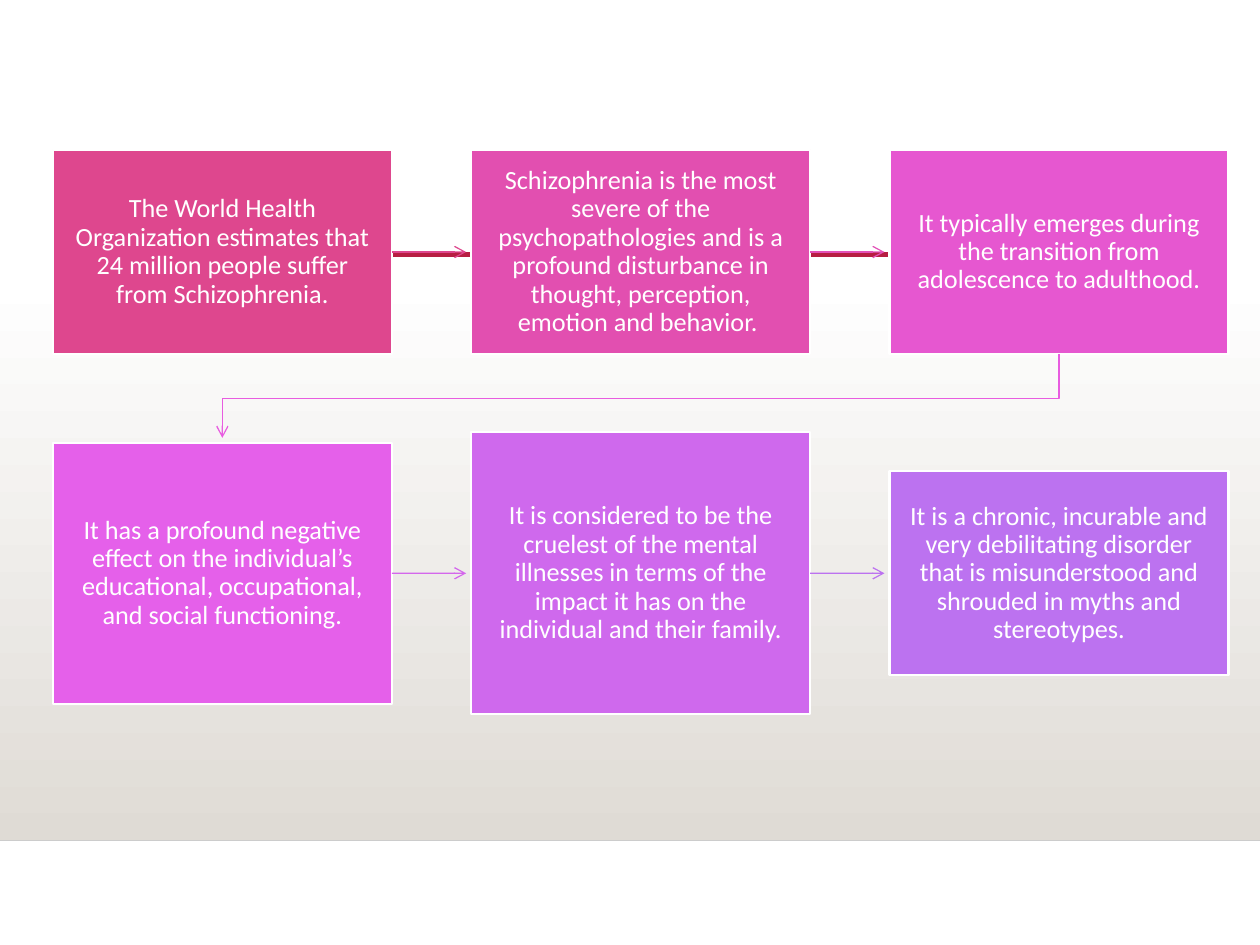
from dataclasses import dataclass

from lxml.etree import SubElement
from pptx import Presentation
from pptx.dml.color import RGBColor
from pptx.enum.shapes import MSO_CONNECTOR, MSO_SHAPE
from pptx.enum.text import MSO_ANCHOR, PP_ALIGN
from pptx.oxml.ns import qn
from pptx.util import Inches, Pt

COLORS = {
    "white": "FFFFFF",
    "sand": "DFDBD5",
    "floor": "CCCCCC",
    "red": "B71E42",
    "prevalence": "DE478E",
    "severity": "E24FB0",
    "onset": "E657D0",
    "functioning": "E560EA",
    "impact": "CF69ED",
    "outlook": "BC72F0",
    "to_severity": "DE478E",
    "to_onset": "E351B8",
    "to_functioning": "E85CE0",
    "to_impact": "D467EC",
    "to_outlook": "BC72F0",
}
SLIDE_WIDTH, SLIDE_HEIGHT = 10, 7.5
GRID_LEFT, COLUMN_PITCH, BOX_WIDTH = 0.42, 3.32, 2.69
ROW_CENTERS = (2.0, 4.55)
ARROW_GAP = 0.04
HORIZON, FLOOR = 2.2, 6.67


@dataclass(frozen=True)
class Step:
    key: str
    column: int
    row: int
    height: float
    text: str

    @property
    def left(self) -> float:
        return GRID_LEFT + self.column * COLUMN_PITCH

    @property
    def center(self) -> float:
        return self.left + BOX_WIDTH / 2

    @property
    def middle(self) -> float:
        return ROW_CENTERS[self.row]

    @property
    def top(self) -> float:
        return self.middle - self.height / 2


STEPS = (
    Step("prevalence", 0, 0, 1.62,
         "The World Health Organization estimates that 24 million people "
         "suffer from Schizophrenia."),
    Step("severity", 1, 0, 1.62,
         "Schizophrenia is the most severe of the psychopathologies and is a "
         "profound disturbance in thought, perception, emotion and behavior. "),
    Step("onset", 2, 0, 1.62,
         "It typically emerges during the transition from adolescence to adulthood."),
    Step("functioning", 0, 1, 2.07,
         "It has a profound negative effect on the individual’s educational, "
         "occupational, and social functioning."),
    Step("impact", 1, 1, 2.24,
         "It is considered to be the cruelest of the mental illnesses in terms "
         "of the impact it has on the individual and their family."),
    Step("outlook", 2, 1, 1.62,
         "It is a chronic, incurable and very debilitating disorder that is "
         "misunderstood and shrouded in myths and stereotypes."),
)


def color(name: str) -> RGBColor:
    return RGBColor.from_string(COLORS[name])


def write(frame, text: str, *, size: float, ink: str, font: str = "Calibri",
          align=PP_ALIGN.CENTER, spacing: float = 0.9) -> None:
    paragraph = frame.paragraphs[0]
    paragraph.text = text
    paragraph.alignment = align
    paragraph.line_spacing = spacing
    paragraph.font.name = font
    paragraph.font.size = Pt(size)
    paragraph.font.color.rgb = color(ink)


def style_line(shape, ink: str, width: float, arrow: bool = False) -> None:
    shape.line.color.rgb = color(ink)
    shape.line.width = Pt(width)
    if arrow:
        outline = shape._element.spPr.find(qn("a:ln"))
        SubElement(outline, qn("a:tailEnd"), type="arrow")


def draw_line(slide, start: tuple, end: tuple, ink: str, width: float,
              arrow: bool = False):
    connector = slide.shapes.add_connector(
        MSO_CONNECTOR.STRAIGHT, *(Inches(value) for value in (*start, *end)))
    style_line(connector, ink, width, arrow)
    SubElement(connector._element.spPr, qn("a:effectLst"))
    return connector


def draw_backdrop(slide) -> None:
    glow = slide.shapes.add_shape(
        MSO_SHAPE.RECTANGLE, 0, Inches(HORIZON),
        Inches(SLIDE_WIDTH), Inches(FLOOR - HORIZON))
    glow.shadow.inherit = False
    glow.line.fill.background()
    glow.fill.gradient()
    glow.fill.gradient_angle = 270
    for stop, name in zip(glow.fill.gradient_stops, ("white", "sand")):
        stop.color.rgb = color(name)
    draw_line(slide, (0, FLOOR), (SLIDE_WIDTH, FLOOR), "floor", 1)
    draw_line(slide, (1.58, 2.02), (8.77, 2.02), "red", 2.5)


def draw_step(slide, step: Step):
    box = slide.shapes.add_shape(
        MSO_SHAPE.RECTANGLE, Inches(step.left), Inches(step.top),
        Inches(BOX_WIDTH), Inches(step.height))
    box.shadow.inherit = False
    box.fill.solid()
    box.fill.fore_color.rgb = color(step.key)
    style_line(box, "white", 1.25)
    frame = box.text_frame
    frame.word_wrap = True
    frame.vertical_anchor = MSO_ANCHOR.MIDDLE
    frame.margin_left = frame.margin_right = Inches(0.13)
    frame.margin_top = frame.margin_bottom = Inches(0.14)
    write(frame, step.text, size=15, ink="white")
    return box


def draw_row_arrow(slide, source: Step, target: Step, source_box) -> None:
    arrow = draw_line(
        slide, (source.left + BOX_WIDTH, source.middle),
        (target.left - ARROW_GAP, target.middle),
        f"to_{target.key}", 0.75, arrow=True)
    arrow.begin_connect(source_box, 3)


def draw_row_change(slide, source: Step, target: Step) -> None:
    start = source.top + source.height
    end = target.top - ARROW_GAP
    turn = (start + target.top) / 2
    builder = slide.shapes.build_freeform(
        Inches(source.center), Inches(start))
    corners = ((source.center, turn), (target.center, turn), (target.center, end))
    builder.add_line_segments(
        [(Inches(x), Inches(y)) for x, y in corners], close=False)
    bend = builder.convert_to_shape()
    bend.shadow.inherit = False
    bend.fill.background()
    style_line(bend, f"to_{target.key}", 0.75, arrow=True)


def main() -> None:
    deck = Presentation()
    deck.slide_width, deck.slide_height = Inches(SLIDE_WIDTH), Inches(SLIDE_HEIGHT)
    slide = deck.slides.add_slide(deck.slide_layouts[6])
    draw_backdrop(slide)
    boxes = [draw_step(slide, step) for step in STEPS]
    for source, target, box in zip(STEPS, STEPS[1:], boxes):
        if source.row == target.row:
            draw_row_arrow(slide, source, target, box)
        else:
            draw_row_change(slide, source, target)
    deck.save("out.pptx")


if __name__ == "__main__":
    main()
